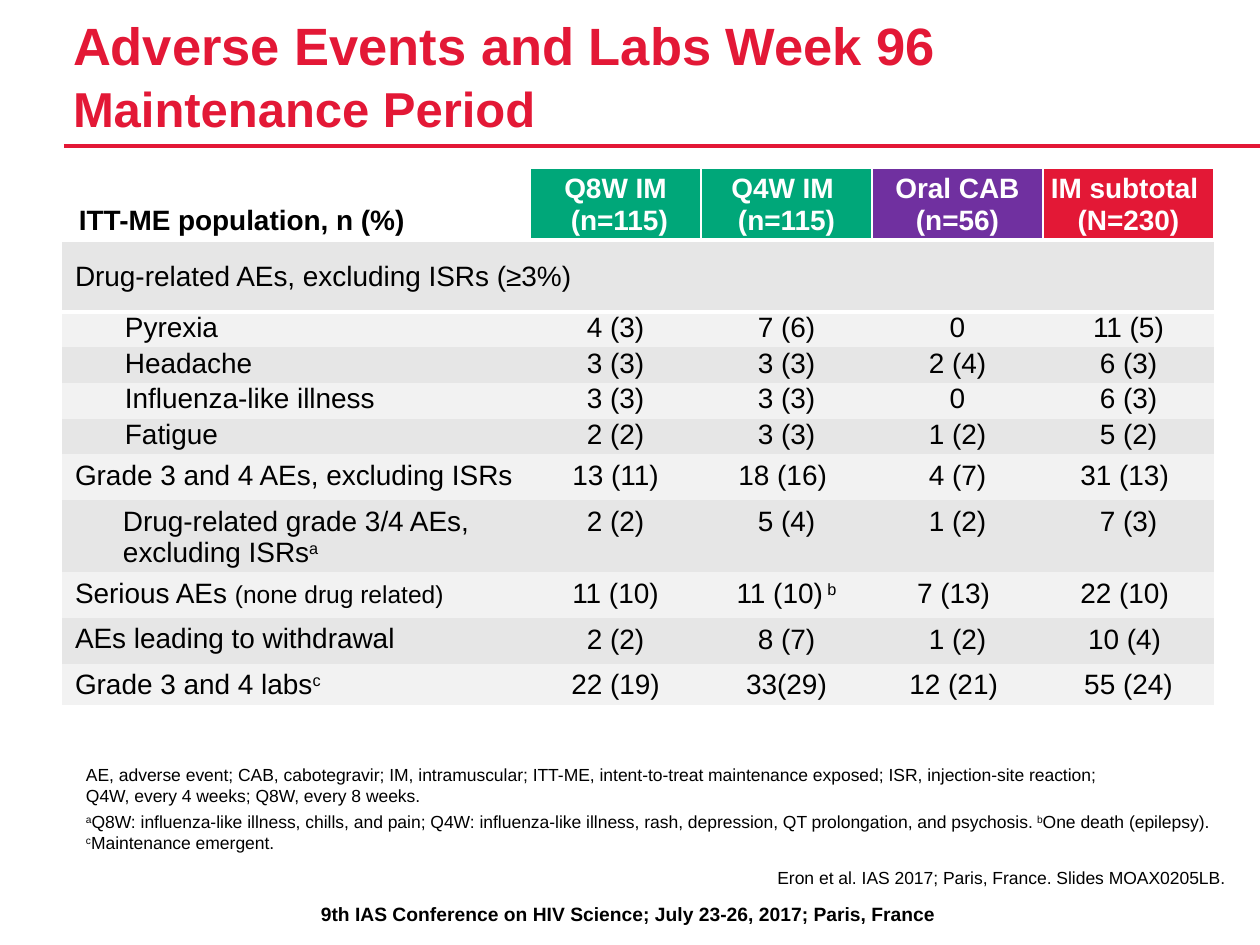
"""Build the week 96 adverse events and labs slide."""
from lxml import etree
from pptx import Presentation
from pptx import util as u
from pptx.dml.color import RGBColor
from pptx.enum import shapes, text
from pptx.oxml.ns import qn

PX = 914400 // 126
RED = RGBColor(0xE3, 0x18, 0x36)
GREEN = RGBColor(0x00, 0xA7, 0x79)
PURPLE = RGBColor(0x70, 0x30, 0xA0)
BLACK = RGBColor(0, 0, 0)
WHITE = RGBColor(255, 255, 255)
BANDS = RGBColor(0xF2, 0xF2, 0xF2), RGBColor(0xE6, 0xE6, 0xE6)
LEFT, CENTER, RIGHT = text.PP_ALIGN.LEFT, text.PP_ALIGN.CENTER, text.PP_ALIGN.RIGHT
TOP, MIDDLE, BOTTOM = text.MSO_ANCHOR.TOP, text.MSO_ANCHOR.MIDDLE, text.MSO_ANCHOR.BOTTOM
NO_STYLE = "{2D5ABB26-0587-4C30-8999-92F81FD0307C}"
SUP = "superscript"

TITLE = [[("Adverse Events and Labs Week 96\n", 30), ("Maintenance Period", 28)]]
NOTES = [
    ["AE, adverse event; CAB, cabotegravir; IM, intramuscular; ITT-ME, intent-to-treat "
     "maintenance exposed; ISR, injection-site reaction; \n"
     "Q4W, every 4 weeks; Q8W, every 8 weeks."],
    [("a", SUP), "Q8W: influenza-like illness, chills, and pain; Q4W: influenza-like illness, "
     "rash, depression, QT prolongation, and psychosis. ", ("b", SUP), "One death (epilepsy). ",
     ("c", SUP), "Maintenance emergent."],
]
SOURCE = [["Eron et al. IAS 2017; Paris, France. Slides MOAX0205LB."]]
FOOTER = [["9th IAS Conference on HIV Science; July 23-26, 2017; Paris, France"]]

HEADERS = [
    ([["ITT-ME population, n (%)"]], None),
    ([["Q8W IM"], [" (n=115)"]], GREEN),
    ([["Q4W IM \n(n=115)"]], GREEN),
    ([["Oral CAB\n(n=56)"]], PURPLE),
    ([["IM subtotal "], ["(N=230)"]], RED),
]
# kind, height, label, values
ROWS = [
    ("heading", 72, ["Drug-related AEs, excluding ISRs (≥3%)"], []),
    ("event", 35, ["Pyrexia"], ["4 (3)", "7 (6)", "0", "11 (5)"]),
    ("event", 35, ["Headache"], ["3 (3)", "3 (3)", "2 (4)", "6 (3)"]),
    ("event", 36, ["Influenza-like illness"], ["3 (3)", "3 (3)", "0", "6 (3)"]),
    ("event", 35, ["Fatigue"], ["2 (2)", "3 (3)", "1 (2)", "5 (2)"]),
    ("total", 46, ["Grade 3 and 4 AEs, excluding ISRs"],
     ["13 (11)", "18 (16) ", "4 (7)", "31 (13) "]),
    ("subtotal", 72, ["Drug-related grade 3/4 AEs, excluding ISRs", ("a", SUP)],
     ["2 (2)", "5 (4)", "1 (2)", "7 (3)"]),
    ("total", 46, ["Serious AEs ", ("(none drug related)", 14)],
     ["11 (10)", ["11 (10)", (" b", SUP)], "7 (13) ", "22 (10) "]),
    ("total", 46, ["AEs leading to withdrawal"], ["2 (2)", "8 (7)", "1 (2)", "10 (4) "]),
    ("labs", 41, ["Grade 3 and 4 labs", ("c", SUP)],
     ["22 (19)", "33(29)", "12 (21) ", "55 (24)"]),
]
# label margins, value margins, value line spacing
KINDS = {
    "heading": ((13, 5, 13, 4), (13, 5, 13, 4), 18),
    "event": ((63, 0, 0, 4), (9, 0, 9, 4), 18),
    "total": ((13, 5, 13, 4), (13, 6, 13, 6), None),
    "subtotal": ((61, 5, 13, 4), (13, 5, 13, 4), 18),
    "labs": ((13, 5, 13, 4), (13, 5, 13, 4), 18),
}
COLUMNS = [468] + [171] * 4
HEADER_HEIGHT = 72
SIDES = "left", "top", "right", "bottom"


def px(*lengths):
    return [u.Emu(length * PX) for length in lengths]


def assign(target, values):
    for name, value in values.items():
        setattr(target, name, value)


def write(frame, paragraphs, size, color=BLACK, bold=False, **layout):
    for index, pieces in enumerate(paragraphs):
        paragraph = frame.paragraphs[0] if index == 0 else frame.add_paragraph()
        assign(paragraph, layout)
        for piece in pieces:
            words, style = (piece, None) if isinstance(piece, str) else piece
            for number, line in enumerate(words.split("\n")):
                if number:
                    paragraph.add_line_break()
                if not line:
                    continue
                run = paragraph.add_run()
                run.text = line
                points = style if isinstance(style, int) else size
                assign(run.font, {"name": "Arial", "size": u.Pt(points), "bold": bold})
                run.font.color.rgb = color
                if style == SUP:
                    run.font._element.set("baseline", "30000")


def add_text(slide, box, paragraphs, size, margins=(0, 0, 0, 0), anchor=TOP, **style):
    frame = slide.shapes.add_textbox(*px(*box)).text_frame
    assign(frame, {"word_wrap": True, "vertical_anchor": anchor})
    assign(frame, {f"margin_{side}": length for side, length in zip(SIDES, px(*margins))})
    write(frame, paragraphs, size, **style)


def fill_cell(cell, paragraphs, margins, fill, anchor=TOP, spacing=18, **style):
    assign(cell, {f"margin_{side}": length for side, length in zip(SIDES, px(*margins))})
    cell.vertical_anchor = anchor
    if fill is None:
        cell.fill.background()
    else:
        cell.fill.solid()
        cell.fill.fore_color.rgb = fill
    if spacing:
        style["line_spacing"] = u.Pt(spacing)
    write(cell.text_frame, paragraphs, 16, **style)


def add_borders(cell, widths):
    properties = cell._tc.get_or_add_tcPr()
    for index, (side, points) in enumerate(widths.items()):
        line = etree.Element(qn(f"a:ln{side}"), w=str(u.Pt(points)))
        solid = etree.SubElement(line, qn("a:solidFill"))
        etree.SubElement(solid, qn("a:srgbClr"), val=str(WHITE))
        properties.insert(index, line)


def add_results(slide):
    heights = [HEADER_HEIGHT] + [row[1] for row in ROWS]
    box = px(62, 168, sum(COLUMNS), sum(heights))
    table = slide.shapes.add_table(len(heights), len(COLUMNS), *box).table
    assign(table, {"first_row": False, "horz_banding": False})
    table._tbl.tblPr.find(qn("a:tableStyleId")).text = NO_STYLE
    for column, width in zip(table.columns, px(*COLUMNS)):
        column.width = width
    for row, height in zip(table.rows, px(*heights)):
        row.height = height

    for index, (paragraphs, fill) in enumerate(HEADERS):
        cell = table.cell(0, index)
        fill_cell(cell, paragraphs, (1 if index else 17, 5, 1, 4), fill, BOTTOM, bold=True,
                  color=WHITE if index else BLACK, alignment=CENTER if index else LEFT)
        add_borders(cell, {"L": 1, "R": 1, "T": 1, "B": 2.25})

    for number, (kind, _, label, values) in enumerate(ROWS, 1):
        label_margins, value_margins, spacing = KINDS[kind]
        fill = BANDS[number % 2]
        fill_cell(table.cell(number, 0), [label], label_margins, fill,
                  MIDDLE if kind == "heading" else TOP)
        for index, value in enumerate(values or [""] * 4, 1):
            pieces = [value] if isinstance(value, str) else value
            fill_cell(table.cell(number, index), [pieces], value_margins, fill,
                      spacing=spacing, alignment=CENTER)
    for index in range(len(COLUMNS)):
        add_borders(table.cell(1, index), {"T": 2.25})
    table.cell(1, 0).merge(table.cell(1, 1))


def main():
    presentation = Presentation()
    assign(presentation, {"slide_width": u.Inches(10), "slide_height": u.Inches(7.5)})
    slide = presentation.slides.add_slide(presentation.slide_layouts[6])
    add_text(slide, (8, 896, 1241, 37), FOOTER, 11, (13, 6, 13, 6), bold=True, alignment=CENTER)
    rule = slide.shapes.add_connector(shapes.MSO_CONNECTOR.STRAIGHT, *px(64, 146, 1260, 146))
    rule.line.color.rgb = RED
    rule.line.width = u.Pt(2)
    etree.SubElement(rule._element.spPr, qn("a:effectLst"))
    add_text(slide, (73, 21, 1040, 116), TITLE, 30, anchor=BOTTOM, color=RED, bold=True,
             line_spacing=u.Pt(35))
    add_text(slide, (73, 756, 1152, 103), NOTES, 10, (13, 6, 13, 6), BOTTOM,
             space_after=u.Pt(3))
    add_results(slide)
    add_text(slide, (73, 867, 1152, 25), SOURCE, 10, alignment=RIGHT, space_after=u.Pt(3))
    presentation.save("out.pptx")


if __name__ == "__main__":
    main()
